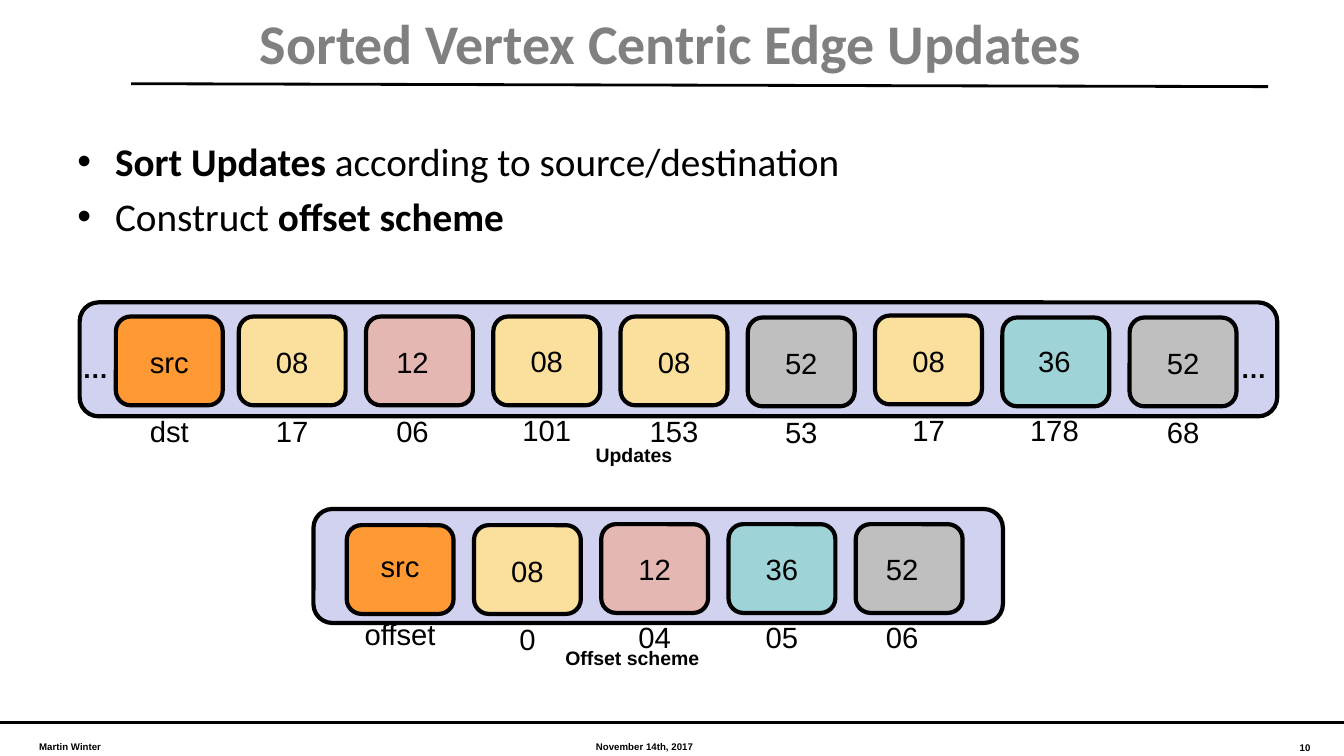
from dataclasses import dataclass

from lxml.etree import SubElement
from pptx import Presentation
from pptx.dml.color import RGBColor
from pptx.enum.shapes import MSO_CONNECTOR, MSO_SHAPE
from pptx.enum.text import MSO_ANCHOR, PP_ALIGN
from pptx.oxml.ns import qn
from pptx.util import Pt

BLACK = RGBColor(0x00, 0x00, 0x00)
TITLE_GRAY = RGBColor(0x80, 0x80, 0x80)
LAVENDER = RGBColor(0xD1, 0xD1, 0xF0)
ORANGE = RGBColor(0xFF, 0x99, 0x33)
YELLOW = RGBColor(0xFB, 0xE0, 0x9D)
PINK = RGBColor(0xE5, 0xB7, 0xB3)
TEAL = RGBColor(0x9E, 0xD3, 0xD7)
GRAY = RGBColor(0xBF, 0xBF, 0xBF)

CELL_WIDTH, CELL_HEIGHT, CELL_PITCH = 76.3, 63.4, 90.9


@dataclass
class Cell:
    source: str
    value: str
    color: RGBColor
    top: float
    text_top: float
    text_shift: float = 0


UPDATES = [
    Cell("08", "17", YELLOW, 226.1, 218.2),
    Cell("12", "06", PINK, 226.1, 218.2, -5),
    Cell("08", "101", YELLOW, 226.1, 217.8),
    Cell("08", "153", YELLOW, 226.1, 218.2),
    Cell("52", "53", GRAY, 226.8, 218.9),
    Cell("08", "17", YELLOW, 225.4, 217.4),
    Cell("36", "178", TEAL, 226.8, 217.8, -1),
    Cell("52", "68", GRAY, 226.8, 218.9),
]
OFFSETS = [
    Cell("src", "offset", ORANGE, 375.1, 363.6),
    Cell("08", "0", YELLOW, 375.1, 367.2),
    Cell("12", "04", PINK, 374.4, 365.8),
    Cell("36", "05", TEAL, 374.4, 365.8),
    Cell("52", "06", GRAY, 374.4, 365.8, -5),
]


class SlideBuilder:
    """Draws on one slide in a fixed style; all lengths are points."""

    def __init__(self, slide):
        self.shapes = slide.shapes

    def line(self, x1, y1, x2, y2):
        connector = self.shapes.add_connector(
            MSO_CONNECTOR.STRAIGHT, Pt(x1), Pt(y1), Pt(x2), Pt(y2))
        connector.line.color.rgb = BLACK
        connector.line.width = Pt(2)
        SubElement(connector._element.spPr, qn("a:effectLst"))

    def rounded_box(self, left, top, width, height, color):
        shape = self.shapes.add_shape(
            MSO_SHAPE.ROUNDED_RECTANGLE, Pt(left), Pt(top), Pt(width), Pt(height))
        shape.shadow.inherit = False
        shape.fill.solid()
        shape.fill.fore_color.rgb = color
        shape.line.color.rgb = BLACK
        shape.line.width = Pt(3)

    def frame(self, left, top, width, height, wrap=True):
        text_box = self.shapes.add_textbox(Pt(left), Pt(top), Pt(width), Pt(height))
        text_box.text_frame.word_wrap = wrap
        return text_box.text_frame

    def format_run(self, run, size, name="Arial", bold=False, color=BLACK):
        run.font.size = Pt(size)
        run.font.name = name
        run.font.bold = bold
        run.font.color.rgb = color

    def title(self, text):
        text_frame = self.frame(51, 0.7, 855.4, 59)
        text_frame.vertical_anchor = MSO_ANCHOR.MIDDLE
        text_frame.text = text
        paragraph = text_frame.paragraphs[0]
        paragraph.alignment = PP_ALIGN.CENTER
        self.format_run(paragraph.runs[0], 40, "Calibri", True, TITLE_GRAY)

    def bullets(self, items):
        """Each item is a list of (text, bold) pairs."""
        text_frame = self.frame(48.2, 94.5, 864, 100)
        for index, item in enumerate(items):
            paragraph = text_frame.add_paragraph() if index else text_frame.paragraphs[0]
            properties = paragraph._p.get_or_add_pPr()
            properties.set("marL", str(Pt(27)))
            properties.set("indent", str(Pt(-27)))
            SubElement(properties, qn("a:buFont"), typeface="Arial")
            SubElement(properties, qn("a:buChar"), char="•")
            if index:
                paragraph.space_before = Pt(5.6)
            for text, bold in item:
                run = paragraph.add_run()
                run.text = text
                self.format_run(run, 28, "Calibri", bold)

    def lowered_text(self, text, left, top, width, height, size,
                     alignment=PP_ALIGN.LEFT, bold=True, wrap=True):
        """Subscript text, one paragraph per line of text."""
        text_frame = self.frame(left, top, width, height, wrap)
        text_frame.text = text
        for paragraph in text_frame.paragraphs:
            paragraph.alignment = alignment
            for run in paragraph.runs:
                self.format_run(run, size, bold=bold)
                run._r.get_or_add_rPr().set("baseline", "-25000")

    def cell(self, cell, left):
        self.rounded_box(left, cell.top, CELL_WIDTH, CELL_HEIGHT, cell.color)
        self.lowered_text(f"{cell.source}\n{cell.value}", left + cell.text_shift,
                          cell.text_top, CELL_WIDTH, 65.5, 36,
                          PP_ALIGN.CENTER, bold=False, wrap=False)

    def cell_row(self, cells, left):
        for index, cell in enumerate(cells):
            self.cell(cell, left + index * CELL_PITCH)


def main():
    presentation = Presentation()
    presentation.slide_width, presentation.slide_height = Pt(960), Pt(540)
    slide = presentation.slides.add_slide(presentation.slide_layouts[6])
    builder = SlideBuilder(slide)

    builder.line(93.6, 59.8, 905.8, 61.9)
    builder.line(0, 516.2, 960, 516.2)
    builder.lowered_text("10", 888.5, 518.4, 54.7, 21.6, 12, PP_ALIGN.RIGHT)
    builder.lowered_text("Martin Winter", 20.9, 517.7, 270.7, 21.6, 12)
    builder.lowered_text("November 14th, 2017", 367.2, 517.7, 186.5, 21.6, 12,
                         PP_ALIGN.CENTER)

    builder.title("Sorted Vertex Centric Edge Updates")
    builder.bullets([
        [("Sort Updates ", True), ("according to source/destination", False)],
        [("Construct ", False), ("offset scheme", True)],
    ])

    builder.rounded_box(56.9, 216, 855.4, 81.4, LAVENDER)
    builder.lowered_text("Updates", 418.3, 296.6, 78.5, 26.6, 24, wrap=False)
    builder.cell(Cell("src", "dst", ORANGE, 226.1, 218.2), 82.8)
    builder.cell_row(UPDATES, 170.6)
    for left in (51.8, 879.1):
        builder.lowered_text("…", left, 227.2, 36, 33.1, 32, wrap=False)

    builder.rounded_box(223.9, 363.6, 492.5, 81.4, LAVENDER)
    builder.lowered_text("Offset scheme", 396.7, 442.1, 154.1, 26.6, 24)
    builder.cell_row(OFFSETS, 247.7)

    presentation.save("out.pptx")


if __name__ == "__main__":
    main()
